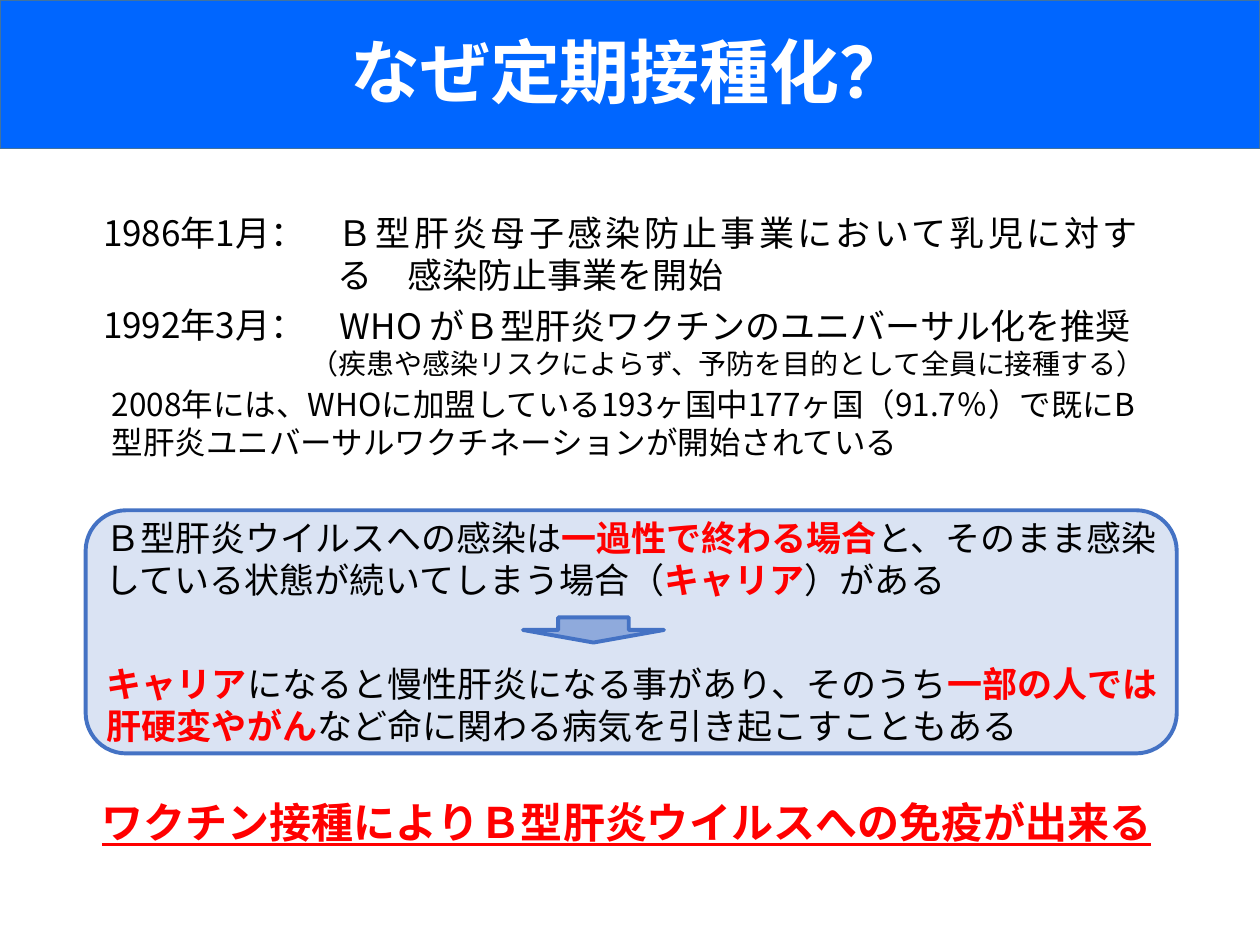
from lxml import etree
from pptx import Presentation
from pptx.dml.color import RGBColor
from pptx.enum.shapes import MSO_SHAPE
from pptx.enum.text import MSO_ANCHOR, PP_ALIGN
from pptx.oxml.ns import qn
from pptx.util import Inches, Pt

RECTANGLE = MSO_SHAPE.RECTANGLE
ROUNDED = MSO_SHAPE.ROUNDED_RECTANGLE
DOWN_ARROW = MSO_SHAPE.DOWN_ARROW
MIDDLE = MSO_ANCHOR.MIDDLE
CENTER = PP_ALIGN.CENTER
JUSTIFY = PP_ALIGN.JUSTIFY

BLACK = RGBColor(0x00, 0x00, 0x00)
WHITE = RGBColor(0xFF, 0xFF, 0xFF)
RED = RGBColor(0xFF, 0x00, 0x00)
BANNER_BLUE = RGBColor(0x00, 0x66, 0xFF)
BANNER_EDGE = RGBColor(0x43, 0x73, 0x9E)
PANEL_BLUE = RGBColor(0xDA, 0xE3, 0xF3)
ARROW_BLUE = RGBColor(0x8F, 0xAA, 0xDC)
EDGE_BLUE = RGBColor(0x44, 0x72, 0xC4)
FONT = "Noto Sans CJK JP"

deck = Presentation()
deck.slide_width = Inches(10)
deck.slide_height = Inches(7.5)
page = deck.slides.add_slide(deck.slide_layouts[6])


def add_block(kind, place, fill, edge, weight):
    block = page.shapes.add_shape(kind, *map(Inches, place))
    block.shadow.inherit = False
    block.fill.solid()
    block.fill.fore_color.rgb = fill
    block.line.color.rgb = edge
    block.line.width = Pt(weight)


def add_text(place, lines):
    box = page.shapes.add_textbox(*map(Inches, place))
    frame = box.text_frame
    frame.word_wrap = True
    for index, (size, spans) in enumerate(lines):
        para = frame.add_paragraph() if index else frame.paragraphs[0]
        for text, color, bold in spans:
            span = para.add_run()
            span.text = text
            span.font.size = Pt(size)
            span.font.name = FONT
            span.font.bold = bold
            span.font.color.rgb = color
            east_asian = etree.SubElement(span.font._element, qn("a:ea"))
            east_asian.set("typeface", FONT)
    return frame


add_block(ROUNDED, (0.68, 4.05, 8.66, 1.93), PANEL_BLUE, EDGE_BLUE, 2.25)
add_block(RECTANGLE, (0, 0, 10, 1.18), BANNER_BLUE, BANNER_EDGE, 1)
add_block(DOWN_ARROW, (4.15, 4.9, 1.12, 0.2), ARROW_BLUE, EDGE_BLUE, 2.25)

title = add_text((0, -0.04, 10, 1.29), [(40, [("なぜ定期接種化？", WHITE, True)])])
title.vertical_anchor = MIDDLE
title.paragraphs[0].alignment = CENTER
title.paragraphs[0].line_spacing = 0.9

for top, width, date in [(1.63, 2.36, "1986年1月："), (2.36, 2.1, "1992年3月：")]:
    add_text((0.72, top, width, 0.44), [(20, [(date, BLACK, False)])])

program = add_text((2.58, 1.63, 6.55, 0.77), [
    (20, [("Ｂ型肝炎母子感染防止事業において乳児に対する　感染防止事業を開始", BLACK, False)]),
])
program.paragraphs[0].alignment = JUSTIFY

add_text((2.32, 2.37, 6.97, 0.71), [
    (20, [("　WHO がＢ型肝炎ワクチンのユニバーサル化を推奨", BLACK, False)]),
    (16, [(" （疾患や感染リスクによらず、予防を目的として全員に接種する）", BLACK, False)]),
])

adoption = add_text((0.79, 3.01, 8.39, 0.71), [
    (18, [("2008年には、WHOに加盟している193ヶ国中177ヶ国（91.7％）で"
           "既にB型肝炎ユニバーサルワクチネーションが開始されている", BLACK, False)]),
])
adoption.paragraphs[0].space_before = Pt(3.6)

add_text((0.74, 4.05, 8.73, 0.77), [(20, [
    ("Ｂ型肝炎ウイルスへの感染は", BLACK, False),
    ("一過性で終わる場合", RED, True),
    ("と、そのまま感染している状態が続いてしまう場合（", BLACK, False),
    ("キャリア", RED, True),
    ("）がある", BLACK, False),
])])

add_text((0.75, 5.21, 8.57, 0.77), [(20, [
    ("キャリア", RED, True),
    ("になると慢性肝炎になる事があり、そのうち", BLACK, False),
    ("一部の人では肝硬変やがん", RED, True),
    ("など命に関わる病気を引き起こすこともある", BLACK, False),
])])

conclusion = add_text((0.71, 6.27, 8.62, 0.5), [
    (24, [("ワクチン接種によりＢ型肝炎ウイルスへの免疫が出来る", RED, True)]),
])
conclusion.paragraphs[0].runs[0].font.underline = True

deck.save("out.pptx")
